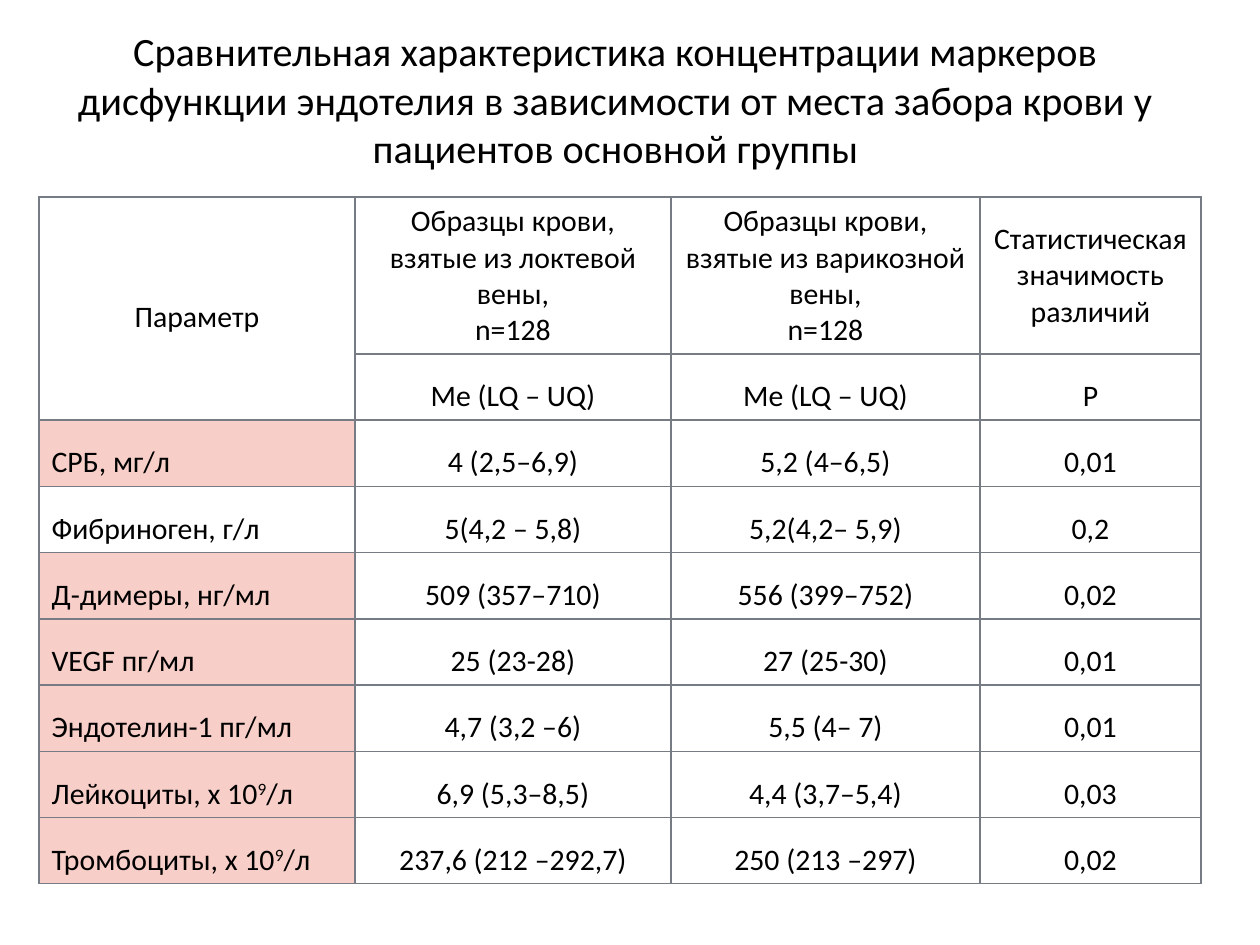
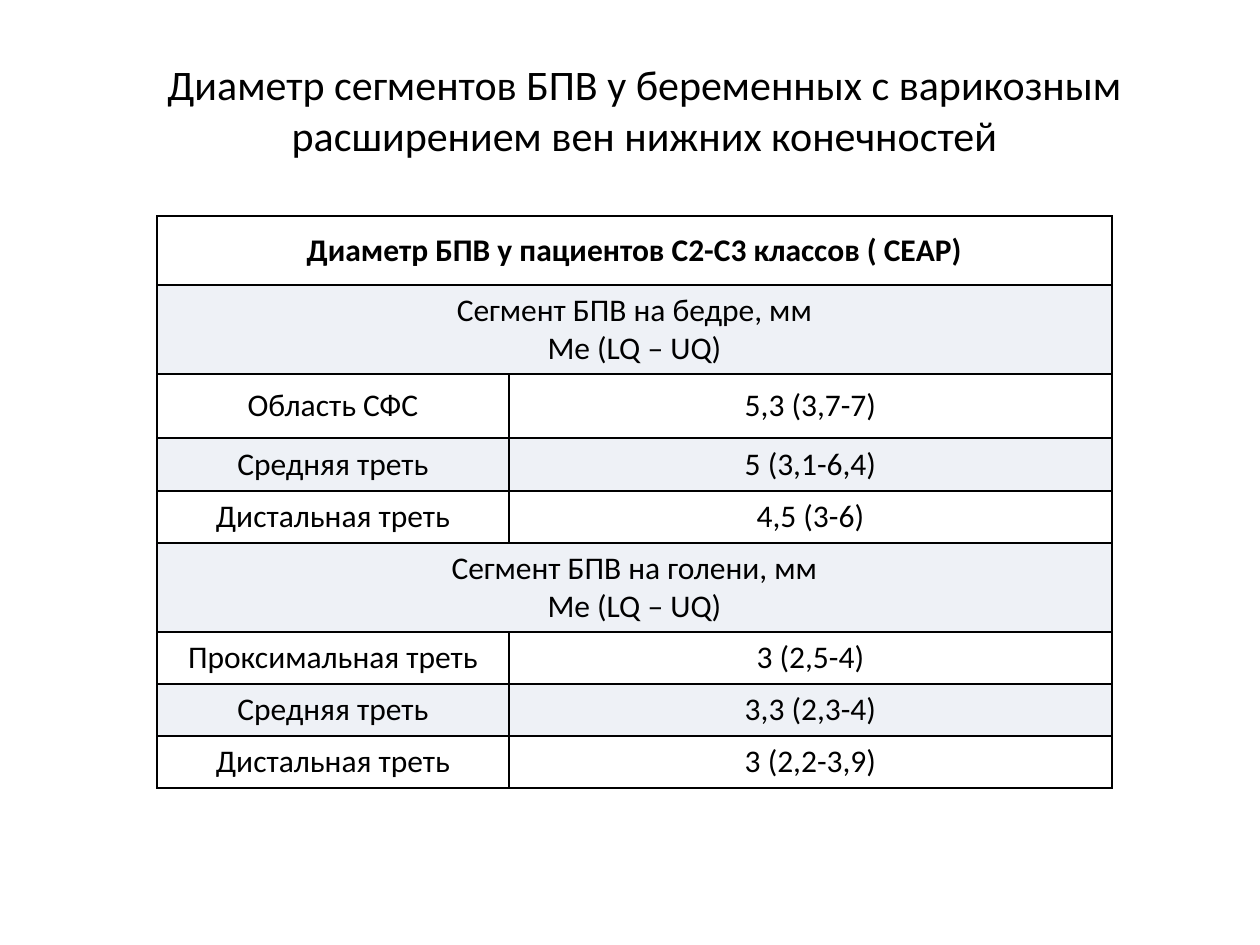
from dataclasses import dataclass
from typing import Any, Optional

import lxml.etree
import pptx
import pptx.dml.color
import pptx.enum.text
import pptx.oxml.ns
import pptx.util

EMU_PER_PX = 914400 / 126
FONT_NAME = "Calibri"
COLORS = {
    "text": "000000",
    "marker_border": "777C84",
    "significant": "F8CFC8",
    "diameter_border": "000000",
    "band": "AEBAD5",
}
LEFT = pptx.enum.text.PP_ALIGN.LEFT
CENTER = pptx.enum.text.PP_ALIGN.CENTER
MIDDLE = pptx.enum.text.MSO_ANCHOR.MIDDLE
SIGNIFICANCE_LEVEL = 0.05


@dataclass(frozen=True)
class Box:
    left: int
    top: int
    width: int
    height: int


@dataclass(frozen=True)
class Cell:
    text: str
    alignment: Any = CENTER
    line_spacing: float = 1.0
    bold: bool = False
    fill: Optional[str] = None
    opacity: int = 100
    row_span: int = 1
    column_span: int = 1


@dataclass(frozen=True)
class TableLayout:
    left: int
    top: int
    columns: list[int]
    rows: list[int]
    size: int
    border: str


def px(length: float) -> int:
    return round(length * EMU_PER_PX)


def rgb(name: str) -> pptx.dml.color.RGBColor:
    return pptx.dml.color.RGBColor.from_string(COLORS[name])


def apply_format(target: Any, values: dict[str, Any]) -> None:
    for name, value in values.items():
        setattr(target, name, value)


def write_text(paragraph: Any, text: str, size: int, bold: bool = False) -> None:
    font_format = {"name": FONT_NAME, "size": pptx.util.Pt(size), "bold": bold}
    for line_number, line in enumerate(text.split("\n")):
        if line_number:
            paragraph.add_line_break()
        for piece_number, piece in enumerate(line.split("^")):
            run = paragraph.add_run()
            run.text = piece
            apply_format(run.font, font_format)
            run.font.color.rgb = rgb("text")
            if piece_number % 2:
                run.font._element.set("baseline", "30000")


def add_title(slide: Any, text: str, box: Box, size: int) -> None:
    shape = slide.shapes.add_textbox(px(box.left), px(box.top), px(box.width), px(box.height))
    apply_format(shape.text_frame, {"word_wrap": True, "vertical_anchor": MIDDLE})
    paragraph = shape.text_frame.paragraphs[0]
    paragraph.alignment = CENTER
    write_text(paragraph, text, size)


def add_borders(table_cell: Any, color: str) -> None:
    properties = table_cell._tc.get_or_add_tcPr()
    for position, side in enumerate("LRTB"):
        line = lxml.etree.Element(pptx.oxml.ns.qn(f"a:ln{side}"), w=str(pptx.util.Pt(1)))
        fill = lxml.etree.SubElement(line, pptx.oxml.ns.qn("a:solidFill"))
        lxml.etree.SubElement(fill, pptx.oxml.ns.qn("a:srgbClr"), val=COLORS[color])
        properties.insert(position, line)


def fill_cell(table_cell: Any, cell: Cell) -> None:
    if cell.fill is None:
        table_cell.fill.background()
        return
    table_cell.fill.solid()
    table_cell.fill.fore_color.rgb = rgb(cell.fill)
    if cell.opacity < 100:
        color = table_cell._tc.tcPr.find(".//" + pptx.oxml.ns.qn("a:srgbClr"))
        lxml.etree.SubElement(color, pptx.oxml.ns.qn("a:alpha"), val=str(cell.opacity * 1000))


def add_table(slide: Any, layout: TableLayout, grid: list[list[Optional[Cell]]]) -> None:
    shape = slide.shapes.add_table(
        len(layout.rows), len(layout.columns), px(layout.left), px(layout.top),
        px(sum(layout.columns)), px(sum(layout.rows)),
    )
    table = shape.table
    apply_format(table, {"first_row": False, "horz_banding": False})
    for column, width in zip(table.columns, layout.columns):
        column.width = px(width)
    for row, height in zip(table.rows, layout.rows):
        row.height = px(height)
    for row_number, cells in enumerate(grid):
        for column_number, cell in enumerate(cells):
            table_cell = table.cell(row_number, column_number)
            fill_cell(table_cell, cell or Cell(""))
            add_borders(table_cell, layout.border)
            if cell is None:
                continue
            if cell.row_span * cell.column_span > 1:
                table_cell.merge(table.cell(
                    row_number + cell.row_span - 1, column_number + cell.column_span - 1))
            table_cell.vertical_anchor = MIDDLE
            paragraph = table_cell.text_frame.paragraphs[0]
            apply_format(paragraph, {
                "alignment": cell.alignment, "line_spacing": cell.line_spacing})
            write_text(paragraph, cell.text, layout.size, cell.bold)


def marker_row(name: str, elbow: str, varicose: str, p_value: str) -> list[Optional[Cell]]:
    significant = float(p_value.replace(",", ".")) < SIGNIFICANCE_LEVEL
    name_cell = Cell(name, LEFT, 1.5, fill="significant" if significant else None)
    return [name_cell] + [Cell(text, line_spacing=1.5) for text in (elbow, varicose, p_value)]


def build_marker_slide(slide: Any) -> None:
    add_title(
        slide,
        "Сравнительная характеристика концентрации маркеров дисфункции эндотелия "
        "в зависимости от места забора крови у пациентов основной группы",
        Box(49, 20, 1134, 158), 23,
    )
    sample = "Образцы крови, взятые из {} вены,\nn=128"
    headings = [sample.format("локтевой"), sample.format("варикозной"),
                "Статистическая значимость различий"]
    statistics = ["Ме (LQ – UQ)", "Ме (LQ – UQ)", "Р"]
    markers = [
        ("СРБ, мг/л", "4 (2,5–6,9)", "5,2 (4–6,5)", "0,01"),
        ("Фибриноген, г/л", "5(4,2 – 5,8)", "5,2(4,2– 5,9)", "0,2"),
        ("Д-димеры, нг/мл", "509 (357–710)", "556 (399–752)", "0,02"),
        ("VEGF пг/мл", "25 (23-28)", "27 (25-30)", "0,01"),
        ("Эндотелин-1 пг/мл", "4,7 (3,2 –6)", "5,5 (4– 7)", "0,01"),
        ("Лейкоциты, х 10^9^/л", "6,9 (5,3–8,5)", "4,4 (3,7–5,4)", "0,03"),
        ("Тромбоциты, х 10^9^/л", "237,6 (212 –292,7)", "250 (213 –297)", "0,02"),
    ]
    grid = [
        [Cell("Параметр", line_spacing=1.5, row_span=2)] + [Cell(text) for text in headings],
        [None] + [Cell(text, line_spacing=1.5) for text in statistics],
    ] + [marker_row(*marker) for marker in markers]
    layout = TableLayout(
        39, 197, [316, 316, 309, 221], [157] + [66] * (len(grid) - 1), 17, "marker_border")
    add_table(slide, layout, grid)


def segment_rows(region: str, diameters: list[tuple[str, str]],
                 first_banded: bool) -> list[list[Optional[Cell]]]:
    rows = [[Cell(f"Сегмент БПВ на {region}, мм\nМе (LQ – UQ)",
                  fill="band", opacity=20, column_span=2), None]]
    for number, diameter in enumerate(diameters):
        banded = (number % 2 == 0) == first_banded
        fill = "band" if banded else None
        rows.append([Cell(text, fill=fill, opacity=20) for text in diameter])
    return rows


def build_diameter_slide(slide: Any) -> None:
    add_title(
        slide,
        "Диаметр сегментов БПВ у беременных с варикозным расширением вен нижних конечностей",
        Box(49, 50, 1191, 118), 24,
    )
    thigh = [("Область СФС", "5,3 (3,7-7)"), ("Средняя треть", "5 (3,1-6,4)"),
             ("Дистальная треть", "4,5 (3-6)")]
    shin = [("Проксимальная треть", "3 (2,5-4)"), ("Средняя треть", "3,3 (2,3-4)"),
            ("Дистальная треть", "3 (2,2-3,9)")]
    heading = Cell("Диаметр БПВ у пациентов С2-С3 классов ( СЕАР)", bold=True, column_span=2)
    grid = [[heading, None]]
    grid += segment_rows("бедре", thigh, first_banded=False)
    grid += segment_rows("голени", shin, first_banded=False)
    layout = TableLayout(
        157, 216, [352, 603], [69, 89, 64, 53, 52, 89, 52, 52, 52], 18, "diameter_border")
    add_table(slide, layout, grid)


def main() -> None:
    presentation = pptx.Presentation()
    apply_format(presentation, {"slide_width": px(1260), "slide_height": px(945)})
    blank_layout = presentation.slide_layouts[6]
    for build_slide in (build_marker_slide, build_diameter_slide):
        build_slide(presentation.slides.add_slide(blank_layout))
    presentation.save("out.pptx")


if __name__ == "__main__":
    main()
